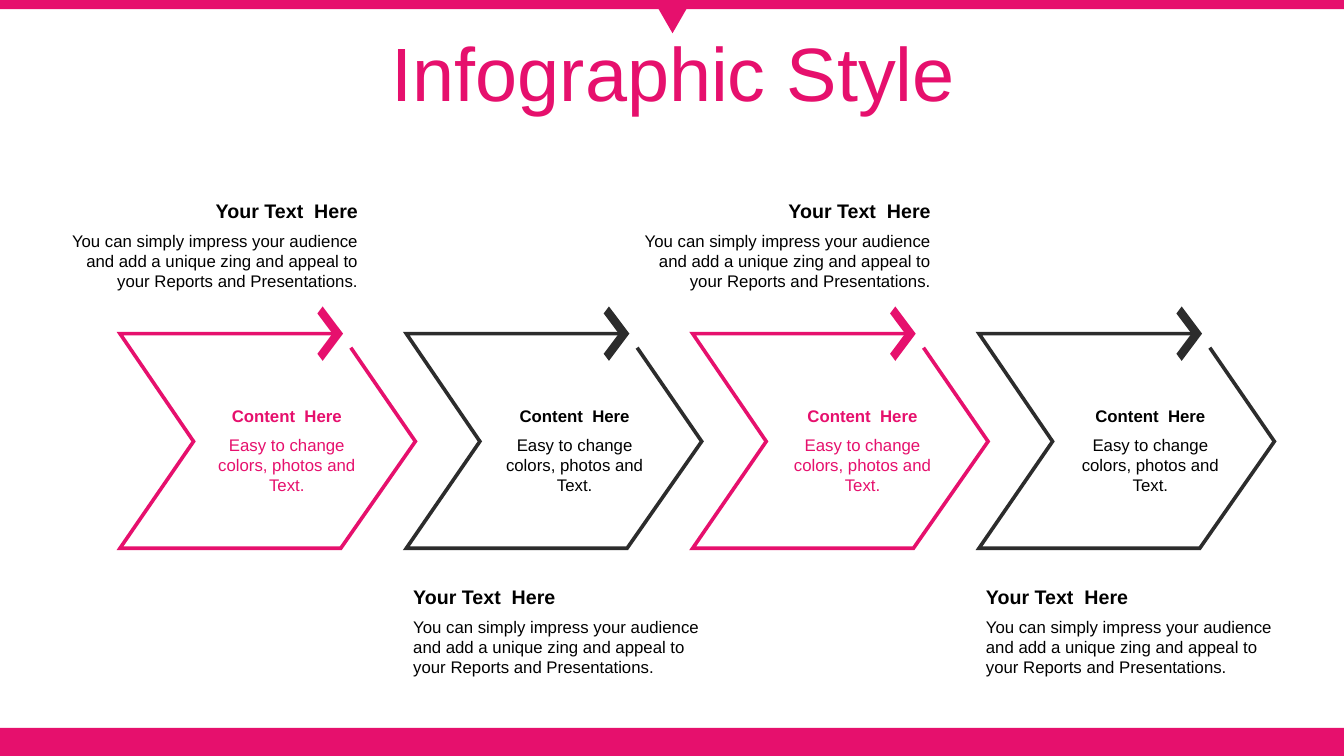
from pptx import Presentation
from pptx.dml.color import RGBColor
from pptx.enum.shapes import MSO_SHAPE
from pptx.enum.text import MSO_ANCHOR, PP_ALIGN
from pptx.oxml.ns import qn
from pptx.util import Inches, Pt
from lxml import etree

RECTANGLE, TRIANGLE = MSO_SHAPE.RECTANGLE, MSO_SHAPE.ISOSCELES_TRIANGLE
LEFT, CENTER, RIGHT = PP_ALIGN.LEFT, PP_ALIGN.CENTER, PP_ALIGN.RIGHT
TOP, MIDDLE = MSO_ANCHOR.TOP, MSO_ANCHOR.MIDDLE

THEME = {
    "pink": RGBColor(0xE6, 0x10, 0x6D),
    "dark": RGBColor(0x2C, 0x2C, 0x2C),
    "black": RGBColor(0, 0, 0),
    "font": "Arial",
    "title": Pt(54),
    "heading": Pt(14),
    "body": Pt(12),
    "outline": Pt(2.58),
}

deck = Presentation()
deck.slide_width = Inches(13.33)
deck.slide_height = Inches(7.5)
page = deck.slides.add_slide(deck.slide_layouts[6])


def add_text(place, words, size, color, align, bold=False, anchor=TOP):
    box = page.shapes.add_textbox(*[Inches(value) for value in place])
    box.text_frame.word_wrap = True
    box.text_frame.vertical_anchor = anchor
    para = box.text_frame.paragraphs[0]
    para.text = words
    para.alignment = align
    para.font.name = THEME["font"]
    para.font.size = THEME[size]
    para.font.bold = bold
    para.font.color.rgb = color
    return para


def add_outline(points, shift, color, closed):
    corners = [(Inches(x + shift), Inches(y)) for x, y in points]
    builder = page.shapes.build_freeform(*corners[0])
    builder.add_line_segments(corners[1:], close=closed)
    outline = builder.convert_to_shape()
    outline.shadow.inherit = False
    if closed:
        outline.fill.solid()
        outline.fill.fore_color.rgb = color
    else:
        outline.fill.background()
    outline.line.color.rgb = color
    outline.line.width = THEME["outline"]
    etree.SubElement(outline.line._get_or_add_ln(), qn("a:miter"), lim="800000")


BARS = [
    (RECTANGLE, 0, 7.22, 13.33, 0.28, 0),
    (RECTANGLE, 0, 0, 13.33, 0.09, 0),
    (TRIANGLE, 6.48, 0, 0.38, 0.33, 180),
]
for kind, left, top, width, height, turn in BARS:
    bar = page.shapes.add_shape(kind, Inches(left), Inches(top), Inches(width), Inches(height))
    bar.rotation = turn
    bar.shadow.inherit = False
    bar.fill.solid()
    bar.fill.fore_color.rgb = THEME["pink"]
    bar.line.fill.background()

title = add_text((0.35, 0.37, 12.66, 0.79), "Infographic Style", "title", THEME["pink"], CENTER, anchor=MIDDLE)
title.line_spacing = 0.9
title.space_before = Pt(10)

CHEVRON = [(3.48, 3.45), (4.12, 4.38), (3.38, 5.44), (1.19, 5.44), (1.92, 4.38), (1.19, 3.31), (3.34, 3.31)]
ARROWHEAD = [(3.2, 3.55), (3.17, 3.51), (3.32, 3.31), (3.17, 3.11), (3.2, 3.07), (3.38, 3.31)]
PITCH = 2.84
CONTENT_PITCH = 2.855
STEPS = [
    ("pink", "pink", 0.47, 1.92, RIGHT),
    ("dark", "black", 1.16, 5.75, LEFT),
    ("pink", "pink", 0.47, 1.92, RIGHT),
    ("dark", "black", 1.16, 5.75, LEFT),
]
for index, (line_color, text_color, note_left, note_top, align) in enumerate(STEPS):
    shift = index * PITCH
    add_outline(CHEVRON, shift, THEME[line_color], False)
    add_outline(ARROWHEAD, shift, THEME[line_color], True)

    content_left = 1.99 + index * CONTENT_PITCH
    add_text((content_left, 3.98, 1.71, 0.3), "Content  Here", "body", THEME[text_color], CENTER, bold=True)
    add_text((content_left, 4.26, 1.71, 0.71), "Easy to change colors, photos and Text.",
             "body", THEME[text_color], CENTER)

    left = note_left + shift
    add_text((left, note_top, 3.18, 0.34), "Your Text  Here", "heading", THEME["black"], align, bold=True)
    add_text((left, note_top + 0.32, 3.18, 0.71),
             "You can simply impress your audience and add a unique zing and appeal "
             "to your Reports and Presentations.", "body", THEME["black"], align)

deck.save("out.pptx")
